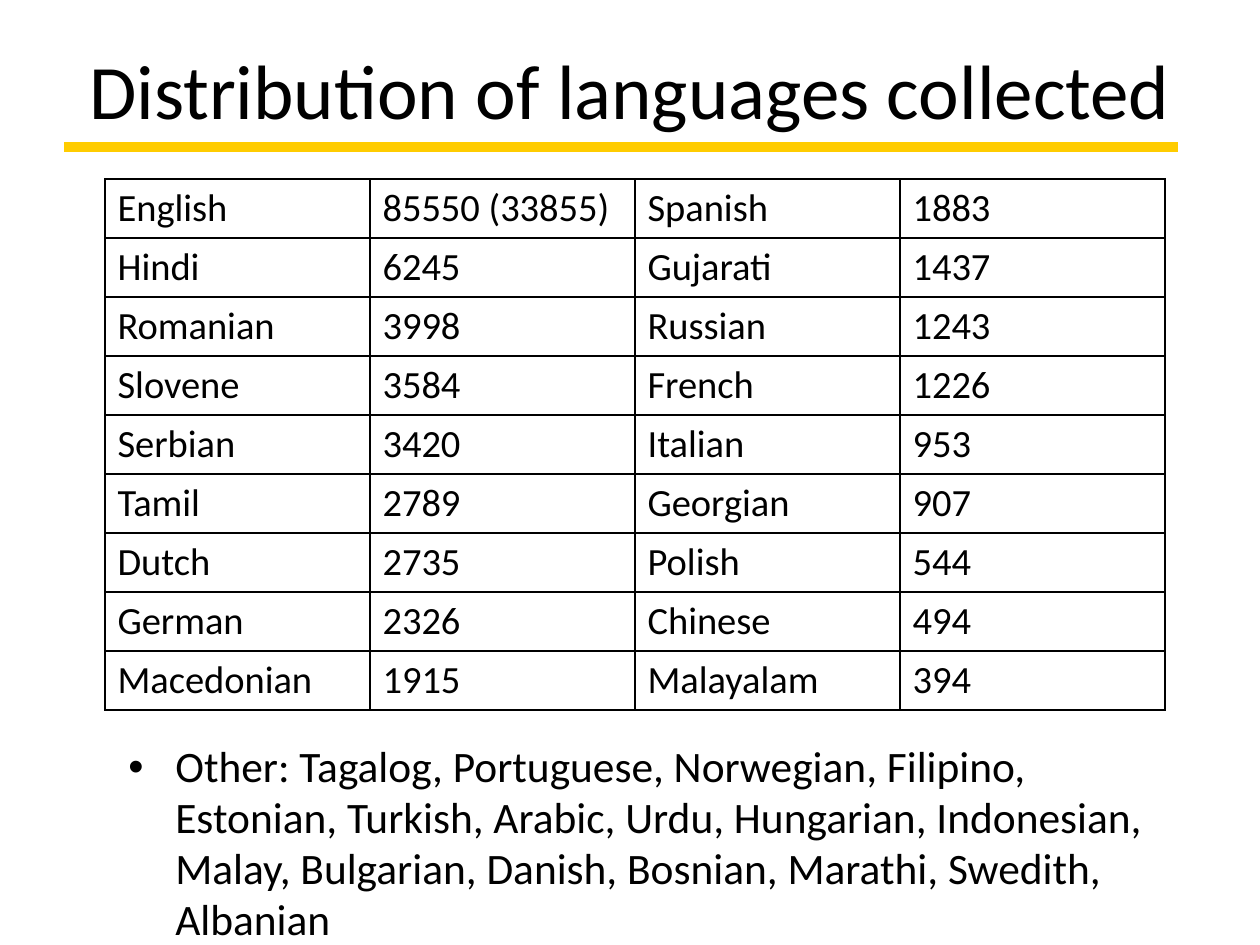
import dataclasses

import lxml.etree
import pptx
import pptx.dml.color
import pptx.enum.shapes
import pptx.enum.text
import pptx.oxml.ns
import pptx.util

DPI = 126
ALIGN = pptx.enum.text.PP_ALIGN
ANCHOR = pptx.enum.text.MSO_ANCHOR

TITLE = "Distribution of languages collected"
OTHER = (
    "Other: Tagalog, Portuguese, Norwegian, Filipino, Estonian, Turkish, "
    "Arabic, Urdu, Hungarian, Indonesian, Malay, Bulgarian, Danish, Bosnian, "
    "Marathi, Swedith, Albanian"
)
COUNTS = [
    ("English", "85550 (33855)", "Spanish", "1883"),
    ("Hindi", "6245", "Gujarati", "1437"),
    ("Romanian", "3998", "Russian", "1243"),
    ("Slovene", "3584", "French", "1226"),
    ("Serbian", "3420", "Italian", "953"),
    ("Tamil", "2789", "Georgian", "907"),
    ("Dutch", "2735", "Polish", "544"),
    ("German", "2326", "Chinese", "494"),
    ("Macedonian", "1915", "Malayalam", "394"),
]


@dataclasses.dataclass(frozen=True)
class Theme:
    font: str = "Calibri"
    ink: str = "000000"
    gold: str = "FFCC00"
    title: float = 44
    body: float = 24.8
    cell: float = 22
    rule: float = 6
    grid: float = 1


THEME = Theme()


def px(size):
    return round(size * pptx.util.Inches(1) / DPI)


def rgb(code):
    return pptx.dml.color.RGBColor.from_string(code)


def apply(item, form):
    for name, value in form.items():
        setattr(item, name, value)


def node(root, tag, **attrs):
    child = lxml.etree.SubElement(root, pptx.oxml.ns.qn(tag))
    for name, value in attrs.items():
        child.set(name, str(value))
    return child


def write(frame, text, size, form):
    para = frame.paragraphs[0]
    apply(para, form)
    run = para.add_run()
    run.text = text
    apply(run.font, {"name": THEME.font, "size": pptx.util.Pt(size)})
    run.font.color.rgb = rgb(THEME.ink)
    return para


def add_text(slide, box, text, size, anchor, form):
    frame = slide.shapes.add_textbox(*map(px, box)).text_frame
    apply(frame, {"word_wrap": True, "vertical_anchor": anchor})
    return write(frame, text, size, form)


def add_bullet(para, indent):
    props = para._p.get_or_add_pPr()
    props.set("marL", str(px(indent)))
    props.set("indent", str(-px(indent)))
    node(props, "a:buFont", typeface="Arial")
    node(props, "a:buChar", char="•")


def add_edges(cell):
    props = cell._tc.get_or_add_tcPr()
    for side in ("a:lnL", "a:lnR", "a:lnT", "a:lnB"):
        line = node(props, side, w=pptx.util.Pt(THEME.grid))
        fill = node(line, "a:solidFill")
        node(fill, "a:srgbClr", val=THEME.ink)


def add_grid(slide, left, top, wide, high, rows):
    count, cols = len(rows), len(rows[0])
    table = slide.shapes.add_table(
        count, cols, px(left), px(top), px(wide * cols), px(high * count)
    ).table
    apply(table, {"first_row": False, "horz_banding": False})
    for col in table.columns:
        col.width = px(wide)
    for row, texts in zip(table.rows, rows):
        row.height = px(high)
        for cell, text in zip(row.cells, texts):
            add_edges(cell)
            cell.fill.background()
            write(cell.text_frame, text, THEME.cell, {"alignment": ALIGN.LEFT})


def add_rule(slide, left, right, top):
    rule = slide.shapes.add_connector(
        pptx.enum.shapes.MSO_CONNECTOR.STRAIGHT, *map(px, (left, top, right, top))
    )
    rule.line.color.rgb = rgb(THEME.gold)
    rule.line.width = pptx.util.Pt(THEME.rule)
    node(rule._element.spPr, "a:effectLst")


def main():
    deck = pptx.Presentation()
    apply(deck, {"slide_width": px(1260), "slide_height": px(945)})
    slide = deck.slides.add_slide(deck.slide_layouts[6])
    add_text(slide, (63, 10, 1134, 158), TITLE, THEME.title, ANCHOR.MIDDLE,
             {"alignment": ALIGN.CENTER})
    other = add_text(slide, (116, 735, 1061, 183), OTHER, THEME.body, ANCHOR.TOP,
                     {"alignment": ALIGN.LEFT, "line_spacing": 0.98})
    add_bullet(other, 47)
    add_grid(slide, 105, 179, 265, 59, COUNTS)
    add_rule(slide, 64, 1178, 147)
    deck.save("out.pptx")


if __name__ == "__main__":
    main()
